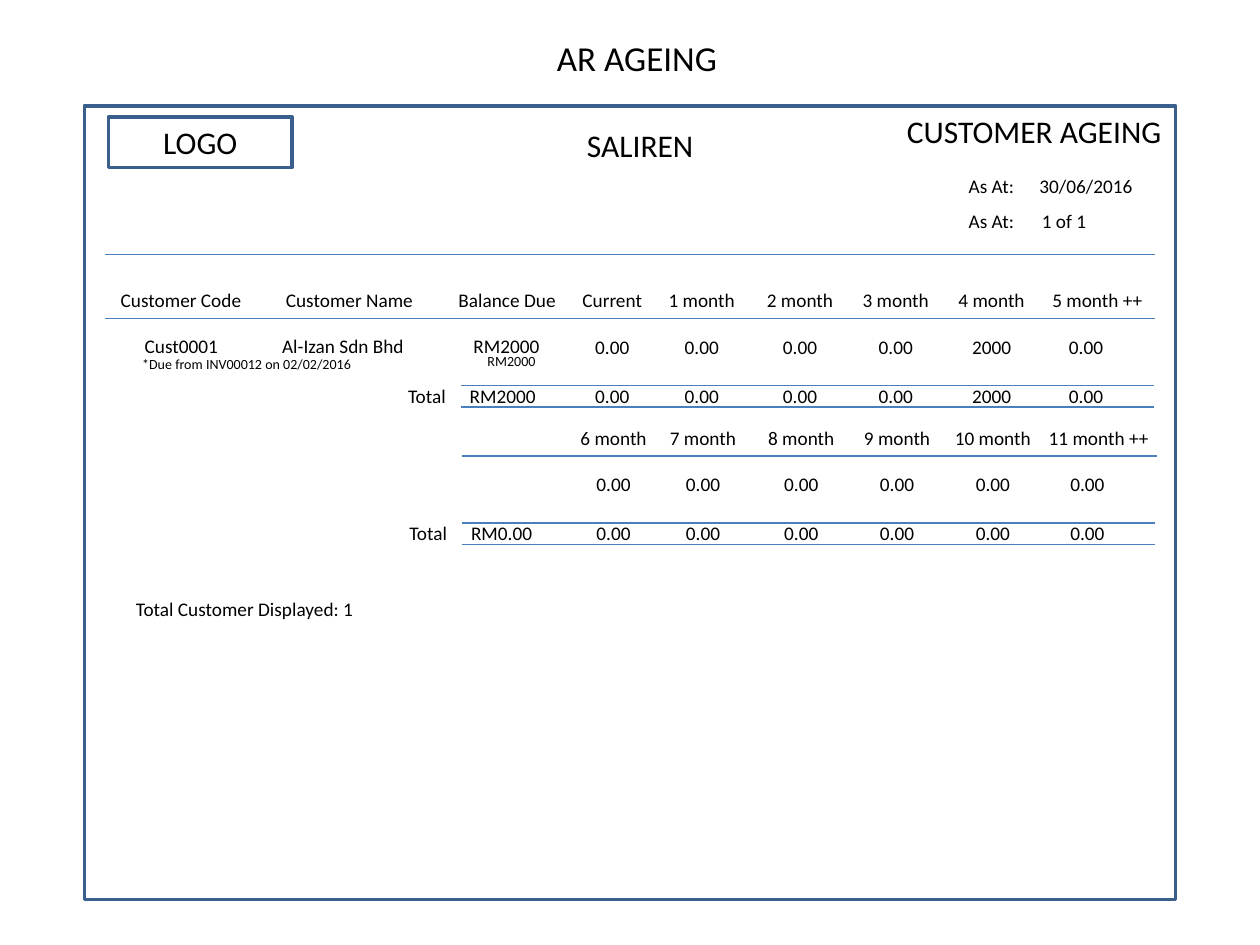
from dataclasses import dataclass

from lxml import etree
from pptx import Presentation
from pptx.dml.color import RGBColor
from pptx.enum.shapes import MSO_CONNECTOR, MSO_SHAPE
from pptx.enum.text import MSO_ANCHOR, PP_ALIGN
from pptx.oxml.ns import qn
from pptx.util import Inches, Pt

RECTANGLE = MSO_SHAPE.RECTANGLE
STRAIGHT = MSO_CONNECTOR.STRAIGHT
LEFT = PP_ALIGN.LEFT
CENTER = PP_ALIGN.CENTER
TOP = MSO_ANCHOR.TOP
MIDDLE = MSO_ANCHOR.MIDDLE
TITLE_ONLY = 5


@dataclass(frozen=True)
class Theme:
    """Colours, font and sizes of the report."""
    font: str = "Calibri"
    text: RGBColor = RGBColor(0x00, 0x00, 0x00)
    border: RGBColor = RGBColor(0x3A, 0x5F, 0x8C)
    rule: RGBColor = RGBColor(0x4B, 0x7E, 0xBC)
    title_size: int = 20
    heading_size: int = 18
    body_size: int = 11
    note_size: int = 8
    border_width: float = 2
    rule_width: float = 0.75


THEME = Theme()
COLUMN_CENTERS = (4.03, 4.74, 5.52, 6.28, 7.04, 7.79)
LAST_HEADER_SHIFT = 0.09
VALUE_WIDTH = 0.52


def format_text(shape, text, size, align=LEFT, anchor=TOP):
    """Write one line of text in the theme's font."""
    frame = shape.text_frame
    frame.text = text
    frame.word_wrap = False
    frame.vertical_anchor = anchor
    paragraph = frame.paragraphs[0]
    paragraph.alignment = align
    paragraph.font.name = THEME.font
    paragraph.font.size = Pt(size)
    paragraph.font.color.rgb = THEME.text


def text_height(size):
    """Return the height in inches of a one-line box."""
    return round(size * 1.22 / 72 + 0.1, 2)


def add_label(slide, text, left, top, width, size=THEME.body_size, align=LEFT):
    """Add a one-line text box."""
    shape = slide.shapes.add_textbox(
        Inches(left), Inches(top), Inches(width), Inches(text_height(size)))
    format_text(shape, text, size, align)


def add_rule(slide, left, right, top):
    """Add a thin horizontal line."""
    connector = slide.shapes.add_connector(
        STRAIGHT, Inches(left), Inches(top), Inches(right), Inches(top))
    connector.line.color.rgb = THEME.rule
    connector.line.width = Pt(THEME.rule_width)
    properties = connector._element.find(qn("p:spPr"))
    etree.SubElement(properties, qn("a:effectLst"))


def add_frame(slide, left, top, width, height):
    """Add an outlined rectangle without fill."""
    shape = slide.shapes.add_shape(
        RECTANGLE, Inches(left), Inches(top), Inches(width), Inches(height))
    shape.shadow.inherit = False
    shape.fill.background()
    shape.line.color.rgb = THEME.border
    shape.line.width = Pt(THEME.border_width)
    return shape


def add_title(slide, left, top, width):
    """Move and format the title placeholder."""
    title = slide.shapes.title
    title.left, title.top = Inches(left), Inches(top)
    title.width = Inches(width)
    title.height = Inches(text_height(THEME.title_size))
    format_text(title, "AR AGEING", THEME.title_size)


def add_report_header(slide, left, top):
    """Place the logo box, company, report name and dates."""
    size = THEME.heading_size
    logo = add_frame(slide, left + 0.19, top + 0.09, 1.46, 0.4)
    format_text(logo, "LOGO", size, CENTER, MIDDLE)
    add_label(slide, "SALIREN", left + 3.89, top + 0.11, 1.25, size)
    add_label(slide, "CUSTOMER AGEING", left + 6.43, top, 2.24, size)
    details = (("30/06/2016", 7.48, 0.95), ("1 of 1", 7.5, 0.56))
    for row, (value, offset, width) in enumerate(details):
        row_top = top + 0.49 + row * 0.28
        add_label(slide, "As At:", left + 6.92, row_top, 0.57)
        add_label(slide, value, left + offset, row_top, width)
    add_rule(slide, left + 0.16, left + 8.5, top + 1.18)


def add_ageing_section(slide, left, top, headers, values, total, rule_start):
    """Place one band of ageing columns with its values and totals."""
    last = len(headers) - 1
    for index, (header, value) in enumerate(zip(headers, values)):
        center = left + COLUMN_CENTERS[index]
        header_center = center + (LAST_HEADER_SHIFT if index == last else 0)
        add_label(slide, header, header_center - 0.5, top, 1, align=CENTER)
        for offset in (0.37, 0.76):
            add_label(slide, value, center - VALUE_WIDTH / 2, top + offset,
                      VALUE_WIDTH, align=CENTER)
    add_rule(slide, left + rule_start, left + 8.34, top + 0.29)
    for offset in (0.82, 0.99):
        add_rule(slide, left + 2.83, left + 8.33, top + offset)
    add_label(slide, "Total", left + 2.31, top + 0.76, 0.52)
    add_label(slide, total, left + 2.8, top + 0.76, 0.73)


def add_customer(slide, left, top):
    """Place the customer headings, details and invoice note."""
    columns = (
        ("Customer Code", 0.03, 1.17, "Cust0001", 0.22, 0.79),
        ("Customer Name", 1.34, 1.22, "Al-Izan Sdn Bhd", 1.31, 1.25),
        ("Balance Due", 2.71, 0.98, "RM2000", 2.83, 0.73),
    )
    for header, header_left, header_width, value, value_left, width in columns:
        add_label(slide, header, left + header_left, top, header_width)
        add_label(slide, value, left + value_left, top + 0.36, width)
    size = THEME.note_size
    add_label(slide, "*Due from INV00012 on 02/02/2016",
              left + 0.2, top + 0.53, 1.86, size)
    add_label(slide, "RM2000", left + 2.94, top + 0.51, 0.58, size)


def main():
    """Build and save the ageing report slide."""
    presentation = Presentation()
    presentation.slide_width = Inches(10)
    presentation.slide_height = Inches(7.5)
    slide = presentation.slides.add_slide(
        presentation.slide_layouts[TITLE_ONLY])

    add_title(slide, 4.32, 0.24, 1.48)
    add_frame(slide, 0.67, 0.84, 8.66, 6.3)
    add_report_header(slide, 0.67, 0.84)
    add_customer(slide, 0.83, 2.24)
    add_ageing_section(
        slide, 0.83, 2.24,
        ["Current"] + [f"{month} month" for month in range(1, 5)]
        + ["5 month ++"],
        ["0.00"] * 4 + ["2000", "0.00"], "RM2000", 0)
    add_ageing_section(
        slide, 0.84, 3.33,
        [f"{month} month" for month in range(6, 11)] + ["11 month ++"],
        ["0.00"] * 6, "RM0.00", 2.83)
    add_label(slide, "Total Customer Displayed: 1", 0.98, 4.69, 1.96)
    presentation.save("out.pptx")


if __name__ == "__main__":
    main()
